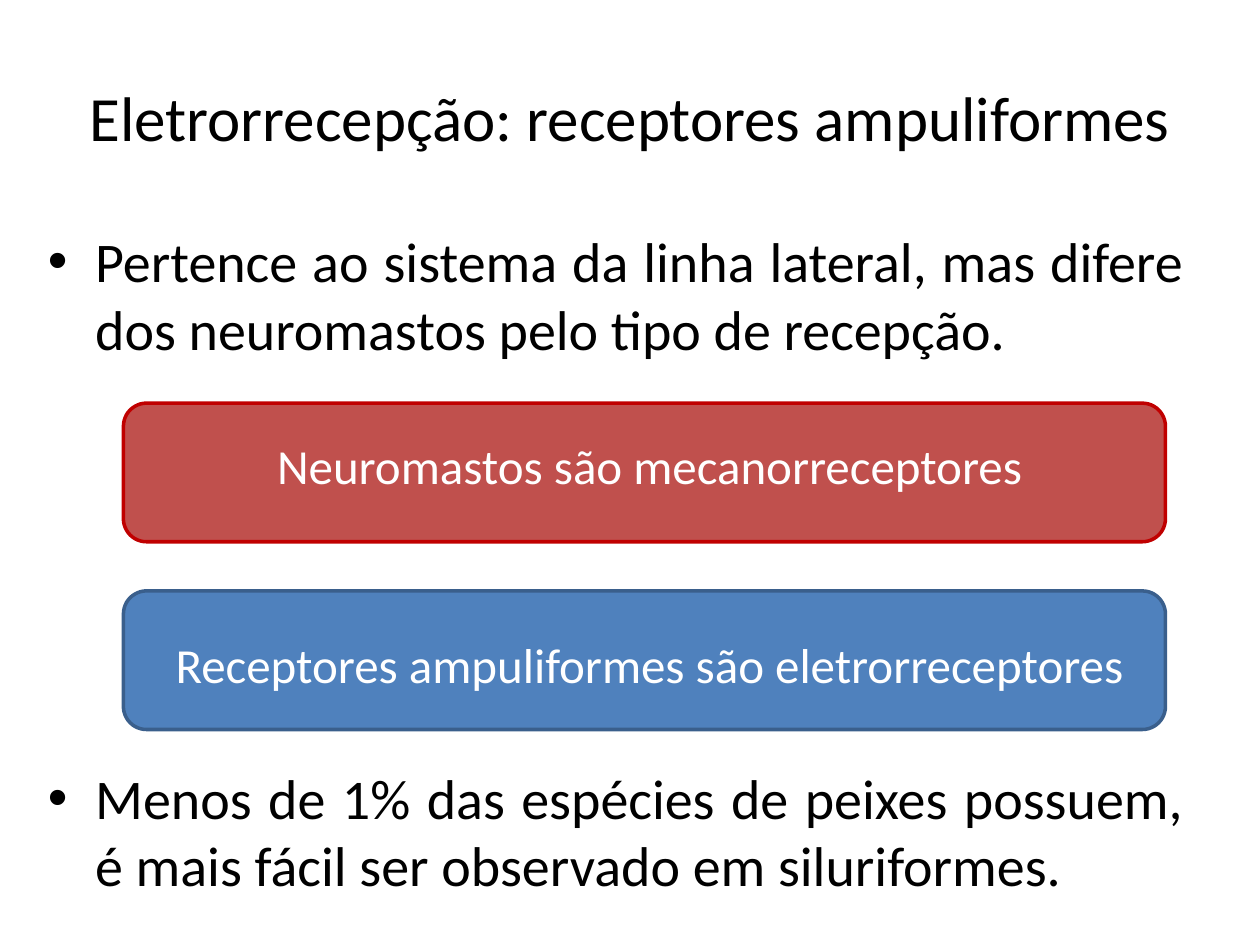
from pptx import Presentation
from pptx import util as u
from pptx.dml.color import RGBColor
from pptx.enum import shapes, text

BLACK = RGBColor(0x00, 0x00, 0x00)
WHITE = RGBColor(0xFF, 0xFF, 0xFF)
RED = RGBColor(0xC0, 0x50, 0x4D)
CRIMSON = RGBColor(0xC0, 0x00, 0x00)
BLUE = RGBColor(0x4F, 0x81, 0xBD)
NAVY = RGBColor(0x3A, 0x5F, 0x8C)

TITLE = "Eletrorrecepção: receptores ampuliformes"
POINTS = [
    ("Pertence ao sistema da linha lateral, mas difere dos neuromastos "
     "pelo tipo de recepção.", None),
    ("Menos de 1% das espécies de peixes possuem, é mais fácil ser "
     "observado em siluriformes.", u.Pt(230)),
]
BANDS = [
    (3.2, 3.41, RED, CRIMSON, "Neuromastos são mecanorreceptores"),
    (4.69, 4.99, BLUE, NAVY, "Receptores ampuliformes são eletrorreceptores"),
]


def place(shape, *box):
    """Move and size a shape in inches."""
    for name, value in zip(("left", "top", "width", "height"), box):
        setattr(shape, name, u.Inches(value))


def write(para, words, size, color, align):
    """Fill a paragraph with one formatted run."""
    para.alignment = align
    run = para.add_run()
    run.text = words
    for name, value in {"name": "Calibri", "size": u.Pt(size)}.items():
        setattr(run.font, name, value)
    run.font.color.rgb = color


def head(slide):
    """Fill the title placeholder."""
    title = slide.shapes.title
    place(title, 0.5, 0.3, 9, 1.25)
    frame = title.text_frame
    frame.vertical_anchor = text.MSO_ANCHOR.MIDDLE
    write(frame.paragraphs[0], TITLE, 36, BLACK, text.PP_ALIGN.CENTER)


def points(slide):
    """Fill the body placeholder, leaving room for the bands."""
    body = slide.placeholders[1]
    place(body, 0.28, 1.75, 9.22, 5.54)
    frame = body.text_frame
    frame.auto_size = text.MSO_AUTO_SIZE.NONE
    for i, (words, gap) in enumerate(POINTS):
        para = frame.add_paragraph() if i else frame.paragraphs[0]
        if gap:
            para.space_before = gap
        write(para, words, 32, BLACK, text.PP_ALIGN.JUSTIFY)


def band(slide, top, fill, line):
    """Draw a rounded coloured band."""
    size = [u.Inches(n) for n in (0.98, top, 8.27, 1.1)]
    shape = slide.shapes.add_shape(shapes.MSO_SHAPE.ROUNDED_RECTANGLE, *size)
    shape.shadow.inherit = False
    shape.fill.solid()
    shape.fill.fore_color.rgb = fill
    shape.line.color.rgb = line
    shape.line.width = u.Pt(2)


def label(slide, top, words):
    """Set a white caption on a band."""
    size = [u.Inches(n) for n in (1.22, top, 7.87, 0.57)]
    frame = slide.shapes.add_textbox(*size).text_frame
    frame.word_wrap = True
    frame.auto_size = text.MSO_AUTO_SIZE.SHAPE_TO_FIT_TEXT
    write(frame.paragraphs[0], words, 28, WHITE, text.PP_ALIGN.CENTER)


def main():
    """Build the slide and save it."""
    deck = Presentation()
    deck.slide_width, deck.slide_height = u.Inches(10), u.Inches(7.5)
    slide = deck.slides.add_slide(deck.slide_layouts[1])
    head(slide)
    points(slide)
    for top, _, fill, line, _ in BANDS:
        band(slide, top, fill, line)
    for _, top, _, _, words in BANDS:
        label(slide, top, words)
    deck.save("out.pptx")


if __name__ == "__main__":
    main()
